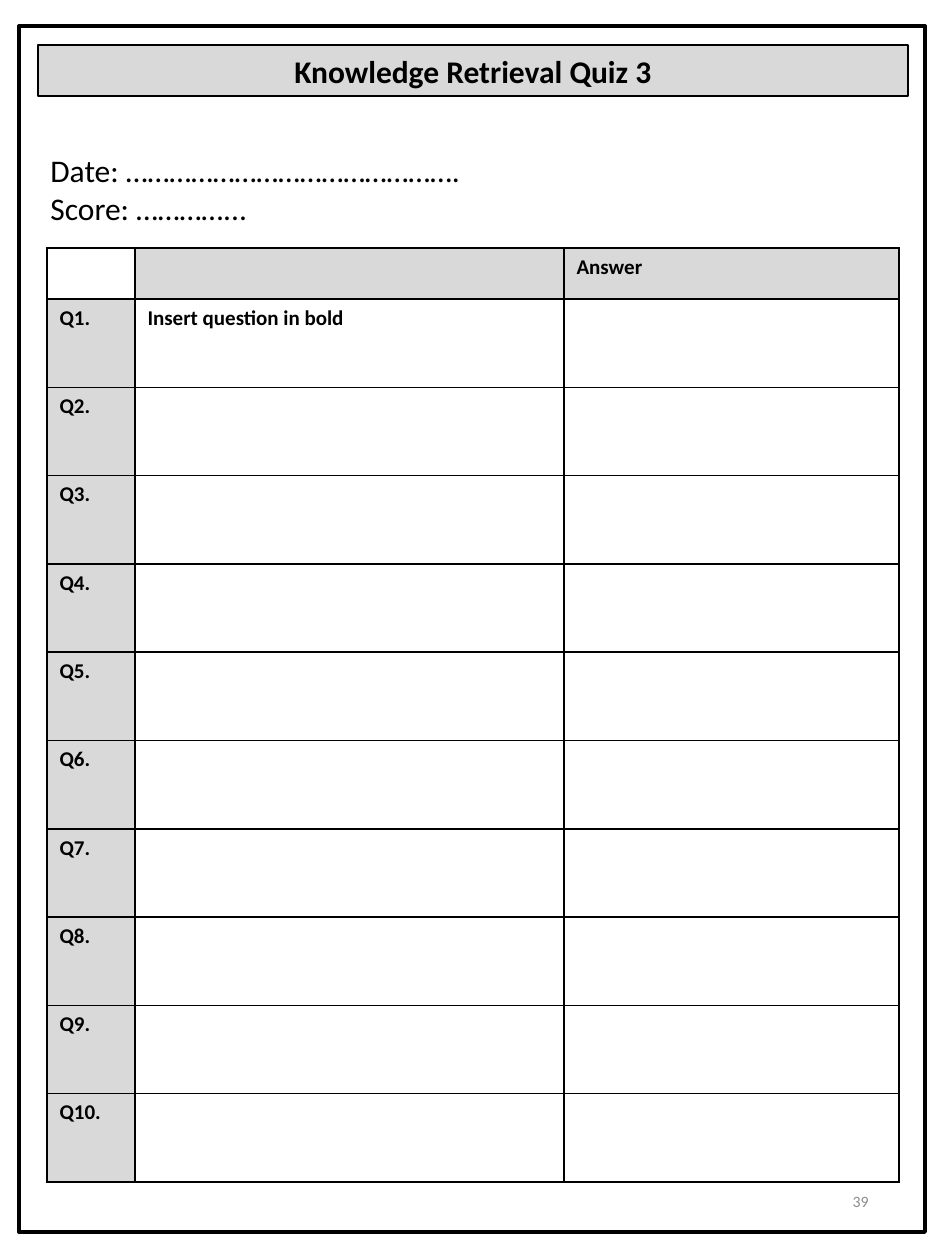
from lxml import etree
from pptx import Presentation
from pptx import util as u
from pptx.dml import color
from pptx.enum import shapes, text
from pptx.oxml import ns

SCALE = 914400 / 126
FONT = "Calibri"
BLACK = "000000"
GREY = "D9D9D9"
PALE = "8C8C8C"


def px(num):
    return u.Emu(round(num * SCALE))


def rgb(code):
    return color.RGBColor.from_string(code)


def place(item, left, top, width, height):
    item.left, item.top = px(left), px(top)
    item.width, item.height = px(width), px(height)


def paint(item, code):
    if code:
        item.fill.solid()
        item.fill.fore_color.rgb = rgb(code)
    else:
        item.fill.background()


def edge(item, width):
    item.line.color.rgb = rgb(BLACK)
    item.line.width = u.Pt(width)


def write(frame, lines, size, bold=False, code=BLACK, align=text.PP_ALIGN.LEFT):
    for i, line in enumerate(lines):
        para = frame.add_paragraph() if i else frame.paragraphs[0]
        para.alignment = align
        run = para.add_run()
        run.text = line
        run.font.name = FONT
        run.font.size = u.Pt(size)
        run.font.bold = bold
        run.font.color.rgb = rgb(code)


def add_frame(slide):
    frame = slide.shapes.add_shape(
        shapes.MSO_SHAPE.RECTANGLE, px(19), px(26), px(906), px(1206))
    frame.shadow.inherit = False
    paint(frame, None)
    edge(frame, 2.25)


def add_title(slide, line):
    title = slide.shapes.title
    place(title, 38, 45, 870, 51)
    paint(title, GREY)
    edge(title, 0.75)
    frame = title.text_frame
    frame.auto_size = text.MSO_AUTO_SIZE.NONE
    frame.vertical_anchor = text.MSO_ANCHOR.MIDDLE
    write(frame, [line], 18, bold=True, align=text.PP_ALIGN.CENTER)


def add_note(slide, box, lines, size, anchor=text.MSO_ANCHOR.TOP, **style):
    frame = slide.shapes.add_textbox(*map(px, box)).text_frame
    frame.word_wrap = True
    frame.vertical_anchor = anchor
    write(frame, lines, size, **style)


def rule_cell(cell):
    props = cell._tc.get_or_add_tcPr()
    for side in ("a:lnL", "a:lnR", "a:lnT", "a:lnB"):
        line = etree.SubElement(props, ns.qn(side), w=str(u.Pt(1)))
        fill = etree.SubElement(line, ns.qn("a:solidFill"))
        etree.SubElement(fill, ns.qn("a:srgbClr"), val=BLACK)


def add_quiz(slide, rows):
    widths = (88, 429, 335)
    head, total = 51, 934
    table = slide.shapes.add_table(
        len(rows), len(widths), px(47), px(248), px(sum(widths)), px(total)).table
    table.horz_banding = False
    table.first_row = False
    for col, width in zip(table.columns, widths):
        col.width = px(width)
    for r, row in enumerate(rows):
        table.rows[r].height = px((total - head) / (len(rows) - 1) if r else head)
        for c, word in enumerate(row):
            cell = table.cell(r, c)
            rule_cell(cell)
            paint(cell, GREY if (r == 0) != (c == 0) else None)
            if word:
                write(cell.text_frame, [word], 12, bold=True)


def main():
    deck = Presentation()
    deck.slide_width, deck.slide_height = px(945), px(1260)
    slide = deck.slides.add_slide(deck.slide_layouts[5])
    add_frame(slide)
    add_title(slide, "Knowledge Retrieval Quiz 3")
    add_note(slide, (38, 145, 649, 89),
             ["Date: ……………………………………….", "Score: …………..."], 18)
    rows = [["", "", "Answer"]]
    rows += [[f"Q{n}.", "", ""] for n in range(1, 11)]
    rows[1][1] = "Insert question in bold"
    add_quiz(slide, rows)
    add_note(slide, (668, 1168, 213, 67), ["39"], 9, text.MSO_ANCHOR.MIDDLE,
             code=PALE, align=text.PP_ALIGN.RIGHT)
    deck.save("out.pptx")


if __name__ == "__main__":
    main()
